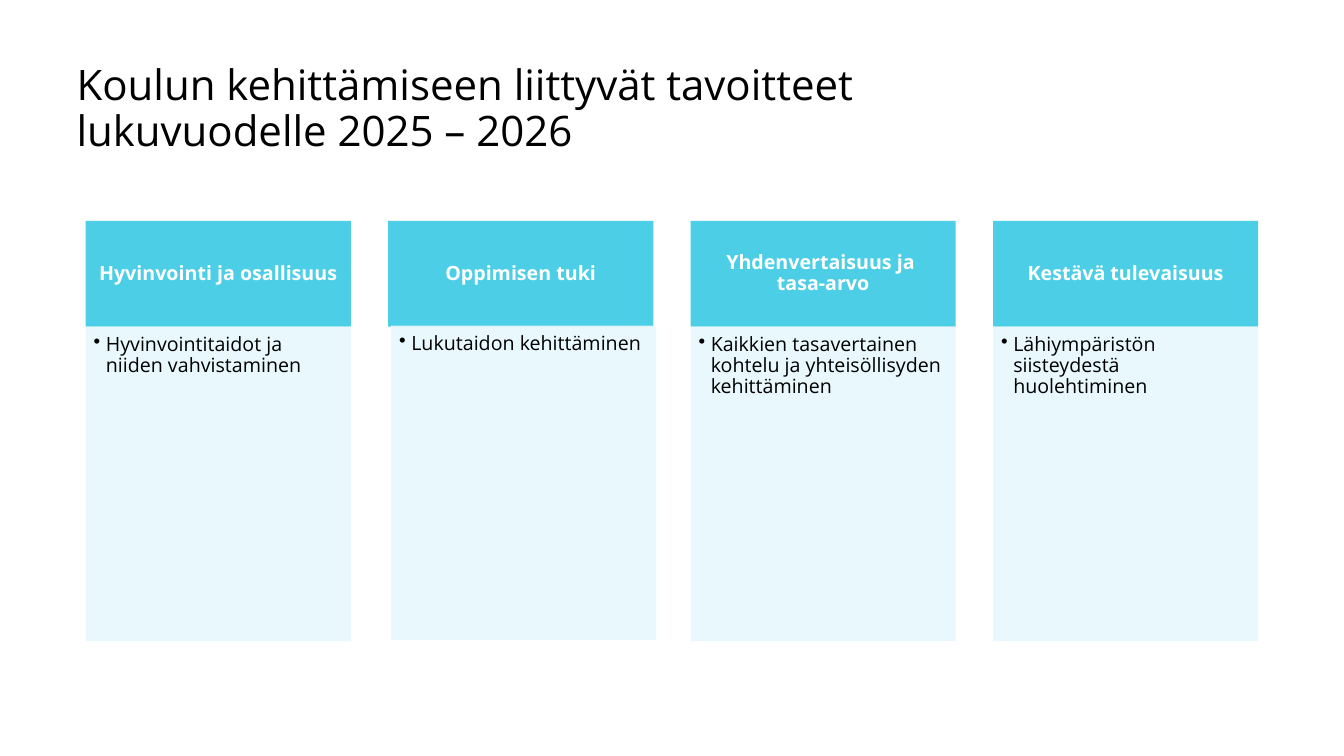
from copy import deepcopy

from pptx import Presentation
from pptx.dml.color import RGBColor
from pptx.enum.shapes import MSO_SHAPE
from pptx.enum.text import MSO_ANCHOR, PP_ALIGN
from pptx.oxml.ns import qn
from pptx.util import Inches, Pt
from lxml.etree import SubElement

FONT = "Open Sans"
COLORS = {"header": "00BBDC", "body": "E6F8FC", "white": "FFFFFF", "black": "000000"}

# Column layout: left edge, pitch and shared width
LEFT, PITCH, WIDTH = 0.85, 3.0, 2.63
HEADER_TOP, HEADER_HEIGHT = 2.19, 1.05
BODY_TOP, BODY_HEIGHT = 3.24, 3.12

# Heading, goal, and (x, y) shift of the goal panel
GOALS = [
    ("Hyvinvointi ja osallisuus", "Hyvinvointitaidot ja niiden vahvistaminen", (0, 0)),
    ("Oppimisen tuki", "Lukutaidon kehittäminen", (0.03, -0.01)),
    ("Yhdenvertaisuus ja \vtasa-arvo",
     "Kaikkien tasavertainen kohtelu ja yhteisöllisyden kehittäminen", (0, 0)),
    ("Kestävä tulevaisuus", "Lähiympäristön siisteydestä huolehtiminen", (0, 0)),
]


def write_text(box, text, size=14, color="black", bold=False, align=PP_ALIGN.LEFT,
               anchor=MSO_ANCHOR.TOP, insets=(0, 0, 0, 0), bullet=False):
    frame = box.text_frame
    frame.word_wrap = True
    frame.vertical_anchor = anchor
    (frame.margin_left, frame.margin_top,
     frame.margin_right, frame.margin_bottom) = map(Inches, insets)
    para = frame.paragraphs[0]
    para.text = text
    para.alignment = align
    para.line_spacing = 0.9
    if bullet:
        para.level = 1
        props = para._p.get_or_add_pPr()
        props.set("marL", str(Inches(0.12)))
        props.set("indent", str(Inches(-0.12)))
        SubElement(props, qn("a:buChar"), char="•")
    for span in para.runs:
        span.font.name = FONT
        span.font.size = Pt(size)
        span.font.bold = bold
        span.font.color.rgb = RGBColor.from_string(COLORS[color])
    # Line breaks take the format of the text around them
    for line_break in para._p.findall(qn("a:br")):
        line_break.append(deepcopy(para.runs[0]._r.rPr))


def add_panel(page, left, top, height, color, opacity):
    panel = page.shapes.add_shape(MSO_SHAPE.RECTANGLE, Inches(left), Inches(top),
                                  Inches(WIDTH), Inches(height))
    panel.shadow.inherit = False
    panel.line.fill.background()
    panel.fill.solid()
    panel.fill.fore_color.rgb = RGBColor.from_string(COLORS[color])
    fill_color = panel._element.spPr.find(qn("a:solidFill"))[0]
    SubElement(fill_color, qn("a:alpha"), val=str(opacity * 1000))
    return panel


def add_goal(page, left, heading, goal, shift):
    header = add_panel(page, left, HEADER_TOP, HEADER_HEIGHT, "header", 70)
    write_text(header, heading, color="white", bold=True, align=PP_ALIGN.CENTER,
               anchor=MSO_ANCHOR.MIDDLE, insets=(0.11, 0.06, 0.11, 0.06))
    body = add_panel(page, left + shift[0], BODY_TOP + shift[1], BODY_HEIGHT, "body", 90)
    write_text(body, goal, insets=(0.08, 0.08, 0.11, 0.12), bullet=True)


def main():
    deck = Presentation()
    deck.slide_width, deck.slide_height = Inches(13.33), Inches(7.5)
    page = deck.slides.add_slide(deck.slide_layouts[6])

    # Title
    title = page.shapes.add_textbox(Inches(0.76), Inches(0.6), Inches(8.37), Inches(0.94))
    write_text(title, "Koulun kehittämiseen liittyvät tavoitteet lukuvuodelle 2025 – 2026",
               size=30, anchor=MSO_ANCHOR.BOTTOM)

    # Goal columns
    for column, (heading, goal, shift) in enumerate(GOALS):
        add_goal(page, LEFT + column * PITCH, heading, goal, shift)

    deck.save("out.pptx")


if __name__ == "__main__":
    main()
